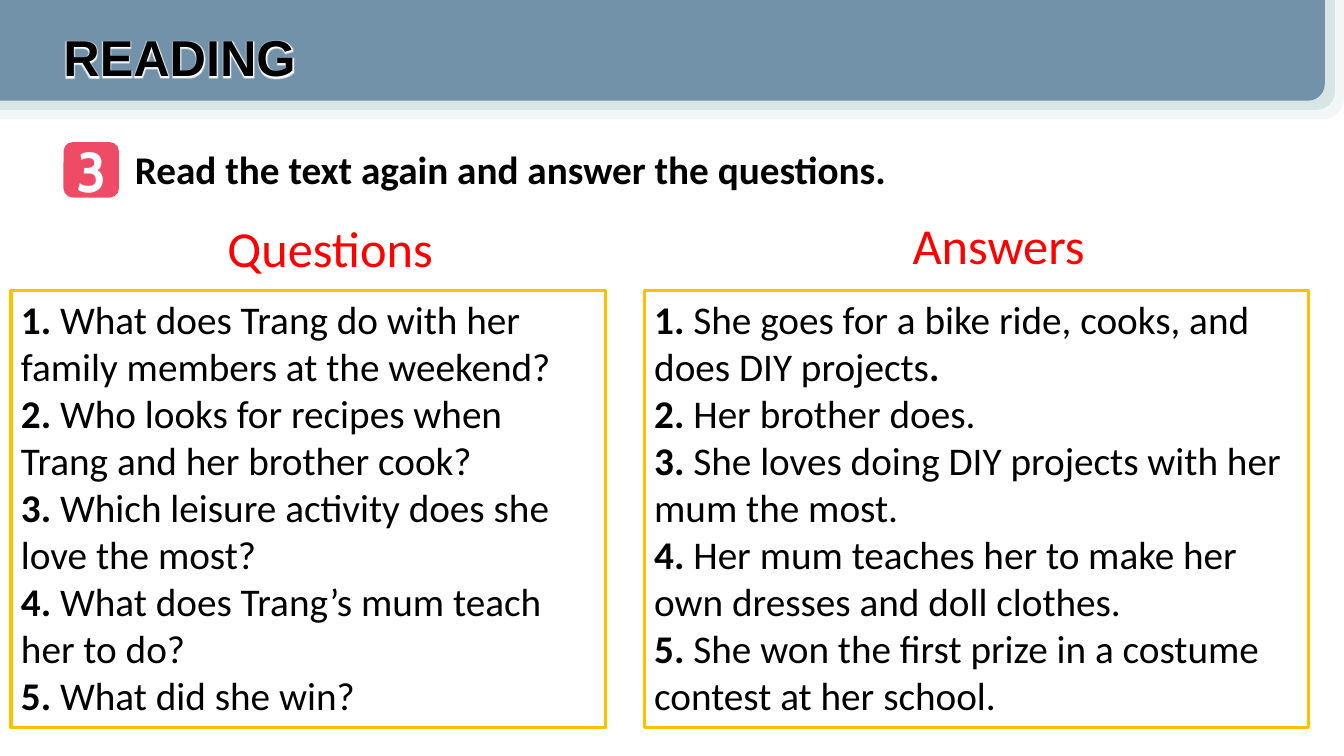
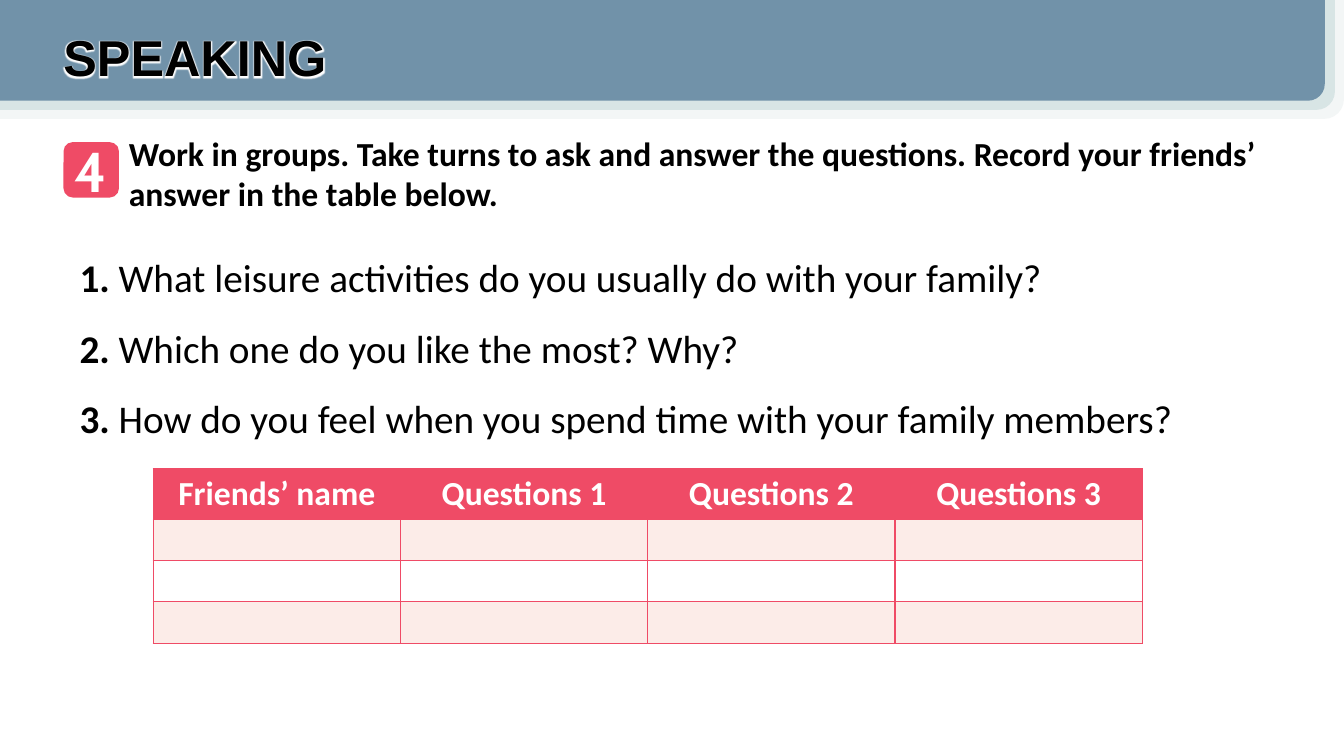
import pptx
import pptx.dml.color
import pptx.enum.shapes
import pptx.enum.text
import pptx.oxml
import pptx.oxml.ns
import pptx.util

SHAPE = pptx.enum.shapes.MSO_SHAPE
ALIGN = pptx.enum.text.PP_ALIGN
ANCHOR = pptx.enum.text.MSO_ANCHOR
Inches, Pt = pptx.util.Inches, pptx.util.Pt

WIDTH, HEIGHT = 13.33, 7.5
BLACK, WHITE, RED = "000000", "FFFFFF", "FF0000"
PINK, PALE_PINK, GOLD = "EF4B66", "FCECE8", "FFC000"
BANDS = [("F3F6F6", 0, 1.18), ("D8E5E5", 0.09, 1.09), ("7192A9", 0.19, 1)]  # colour, right gap, height

# A bar marks where a list item turns bold.
READING = {
    "title": "READING", "number": "3", "task_at": (1.24, 1.39), "task_size": 28,
    "task": "Read the text again and answer the questions.",
}
QA_TOP, QA_HEIGHT = 2.88, 4.34
QA_COLUMNS = [
    ("Questions", (1.06, 2.1), 0.11, 5.9, [
        "What does Trang do with her family members at the weekend?",
        "Who looks for recipes when Trang and her brother cook?",
        "Which leisure activity does she love the most?",
        "What does Trang’s mum teach her to do?",
        "What did she win?",
    ]),
    ("Answers", (7.69, 2.07), 6.39, 6.59, [
        "She goes for a bike ride, cooks, and does DIY projects|.",
        "Her brother does.",
        "She loves doing DIY projects with her mum the most.",
        "Her mum teaches her to make her own dresses and doll clothes.",
        "She won the first prize in a costume contest at her school.",
    ]),
]

SPEAKING = {
    "title": "SPEAKING", "number": "4", "task_at": (1.18, 1.27), "task_size": 24,
    "task": "Work in groups. Take turns to ask and answer the questions. "
            "Record your friends’ answer in the table below.",
}
PROMPTS = [
    "What leisure activities do you usually do with your family?",
    "Which one do you like the most? Why?",
    "How do you feel when you spend time with your family members?",
]
TABLE_HEADS = ["Friends’ name", "Questions 1", "Questions 2", "Questions 3"]
TABLE_ROWS, TABLE_AT, TABLE_WIDTH = 3, (1.52, 4.65), 9.81
HEAD_HEIGHT, ROW_HEIGHT = 0.5, 0.41


def rgb(color):
    return pptx.dml.color.RGBColor.from_string(color)


def box(*lengths):
    return [Inches(n) for n in lengths]


def set_font(p, size, color=BLACK, name="Calibri", bold=None, align=None):
    p.font.size, p.font.name, p.font.bold = Pt(size), name, bold
    p.font.color.rgb = rgb(color)
    p.alignment = align


def add_shape(slide, kind, color, *at):
    sp = slide.shapes.add_shape(kind, *box(*at))
    sp.shadow.inherit = False
    sp.fill.solid()
    sp.fill.fore_color.rgb = rgb(color)
    sp.line.fill.background()
    return sp


def add_text(slide, at, text, size, **style):
    tf = slide.shapes.add_textbox(*box(*at)).text_frame
    tf.word_wrap = True
    p = tf.paragraphs[0]
    p.text = text
    set_font(p, size, **style)
    return p


def add_numbered(slide, at, items, spacing=None):
    sp = slide.shapes.add_textbox(*box(*at))
    tf = sp.text_frame
    tf.word_wrap = True
    for i, item in enumerate(items):
        p = tf.paragraphs[0] if i == 0 else tf.add_paragraph()
        set_font(p, 28)
        p.line_spacing = spacing
        for j, part in enumerate([f"{i + 1}. ", *item.split("|")]):
            r = p.add_run()
            r.text = part
            r.font.bold = j % 2 == 0
    return sp


def add_glow(r):
    r.font.color.rgb = rgb(BLACK)
    r.font.fill  # the glow follows the fill in the run properties
    glow = pptx.oxml.parse_xml(
        f'<a:effectLst {pptx.oxml.ns.nsdecls("a")}><a:glow rad="{Pt(4)}">'
        f'<a:srgbClr val="{WHITE}"/></a:glow></a:effectLst>')
    r.font.color.rgb = rgb(BLACK)
    r._r.get_or_add_rPr().append(glow)


def add_borders(cell, color):
    tc_pr = cell._tc.get_or_add_tcPr()
    for side in "LRTB":
        tc_pr.append(pptx.oxml.parse_xml(
            f'<a:ln{side} {pptx.oxml.ns.nsdecls("a")} w="{Pt(1)}"><a:solidFill>'
            f'<a:srgbClr val="{color}"/></a:solidFill></a:ln{side}>'))


def add_lesson_slide(prs, lesson):
    """Blank slide with the header bands, title, number badge and task."""
    slide = prs.slides.add_slide(prs.slide_layouts[6])
    for color, gap, height in BANDS:
        sp = add_shape(slide, SHAPE.ROUND_1_RECTANGLE, color, 0, 0, WIDTH - gap, height)
        sp._element.spPr.xfrm.set("flipV", "1")
    title = add_text(slide, (0.53, 0.21, 4.52, 0.71), lesson["title"], 36, name="Arial", bold=True)
    add_glow(title.runs[0])
    add_text(slide, (*lesson["task_at"], 11.83, 0.57), lesson["task"], lesson["task_size"], bold=True)

    badge = add_shape(slide, SHAPE.ROUNDED_RECTANGLE, PINK, 0.63, 1.41, 0.55, 0.55)
    tf = badge.text_frame
    tf.margin_left = tf.margin_right = tf.margin_top = tf.margin_bottom = 0
    tf.vertical_anchor = ANCHOR.MIDDLE
    p = tf.paragraphs[0]
    p.text = lesson["number"]
    set_font(p, 40, WHITE, "Cabin", True, ALIGN.CENTER)
    return slide


def add_record_table(slide):
    height = HEAD_HEIGHT + TABLE_ROWS * ROW_HEIGHT
    table = slide.shapes.add_table(
        TABLE_ROWS + 1, len(TABLE_HEADS), *box(*TABLE_AT, TABLE_WIDTH, height)).table
    for i, row in enumerate(table.rows):
        row.height = Inches(ROW_HEIGHT if i else HEAD_HEIGHT)
        fill = PINK if i == 0 else PALE_PINK if i % 2 else WHITE
        for cell, head in zip(row.cells, TABLE_HEADS):
            add_borders(cell, PINK)
            cell.fill.solid()
            cell.fill.fore_color.rgb = rgb(fill)
            if i == 0:
                cell.text = head
                set_font(cell.text_frame.paragraphs[0], 24, WHITE, bold=True, align=ALIGN.CENTER)


def main():
    prs = pptx.Presentation()
    prs.slide_width, prs.slide_height = box(WIDTH, HEIGHT)

    slide = add_lesson_slide(prs, READING)
    for heading, heading_at, left, width, items in QA_COLUMNS:
        add_text(slide, (*heading_at, 4.43, 0.71), heading, 36, color=RED, align=ALIGN.CENTER)
        sp = add_numbered(slide, (left, QA_TOP, width, QA_HEIGHT), items)
        sp.line.color.rgb = rgb(GOLD)
        sp.line.width = Pt(2.25)

    slide = add_lesson_slide(prs, SPEAKING)
    add_numbered(slide, (0.69, 2.23, 11.71, 2.22), PROMPTS, spacing=1.5)
    add_record_table(slide)

    prs.save("out.pptx")


if __name__ == "__main__":
    main()
